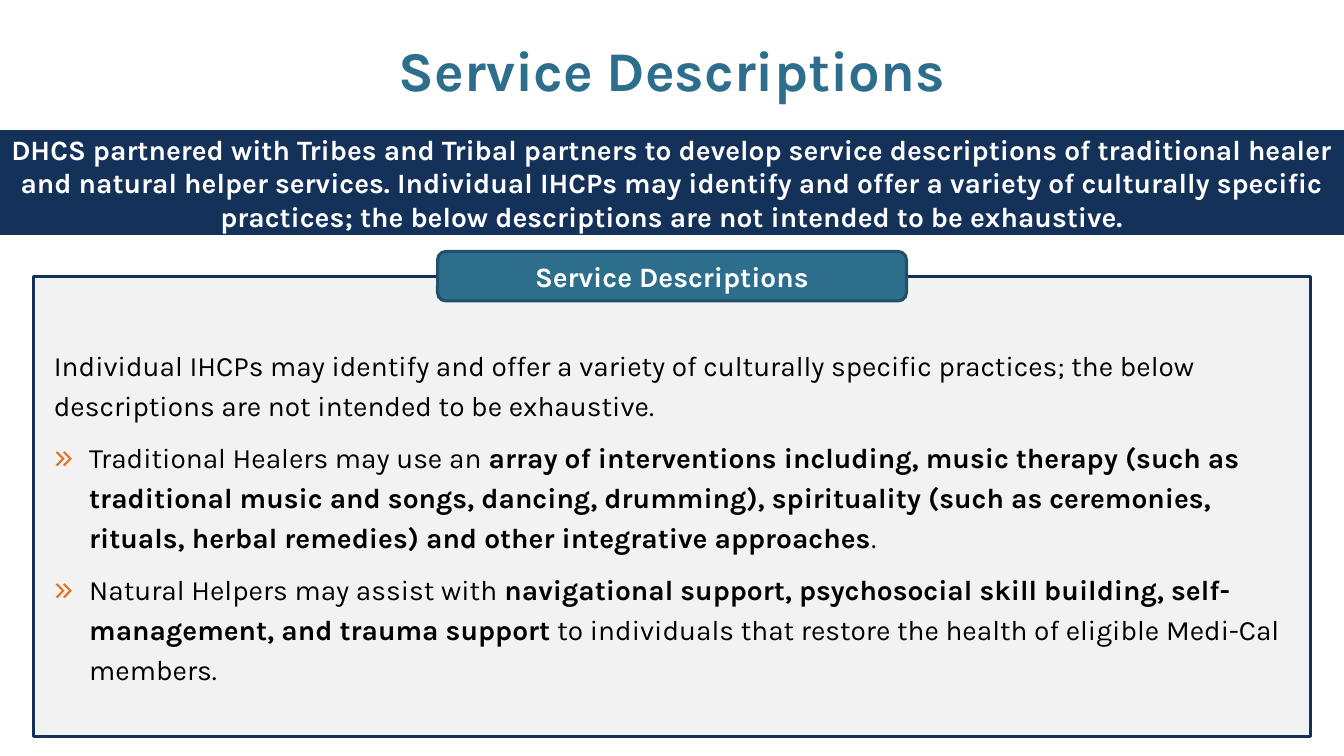
from dataclasses import dataclass

from lxml.etree import SubElement
from pptx import Presentation
from pptx.dml.color import RGBColor
from pptx.enum.shapes import MSO_SHAPE
from pptx.enum.text import MSO_ANCHOR, PP_ALIGN
from pptx.oxml.ns import qn
from pptx.util import Inches, Pt

TITLE = "Service Descriptions"
NOTICE = (
    "Individual IHCPs may identify and offer a variety of culturally specific practices; "
    "the below descriptions are not intended to be exhaustive."
)
# A paragraph is a list of (text, bold) runs.
BANNER = [
    ("DHCS partnered with Tribes and Tribal partners to develop service descriptions "
     "of traditional healer and natural helper services. " + NOTICE, True),
]
INTRODUCTION = [(NOTICE, False)]
SERVICES = [
    [
        ("Traditional Healers may use an ", False),
        ("array of interventions including, music therapy (such as traditional music and songs, "
         "dancing, drumming), spirituality (such as ceremonies, rituals, herbal remedies) "
         "and other integrative approaches", True),
        (".", False),
    ],
    [
        ("Natural Helpers may assist with ", False),
        ("navigational support, psychosocial skill building, self-management, "
         "and trauma support", True),
        (" to individuals that restore the health of eligible Medi-Cal members.", False),
    ],
]


@dataclass(frozen=True)
class Theme:
    font: str = "Karla"
    navy: str = "14315A"
    teal: str = "2D6E8D"
    teal_edge: str = "215168"
    panel: str = "F2F2F2"
    orange: str = "E47225"
    white: str = "FFFFFF"
    black: str = "000000"
    title_size: int = 40
    text_size: int = 20
    line_width: float = 2.25


THEME = Theme()
WIDTH, HEIGHT = 13.33, 7.5
PANEL_TOP, PANEL_WIDTH, PANEL_HEIGHT = 2.74, 12.66, 4.57
TAB_WIDTH, TAB_HEIGHT = 4.65, 0.49
BULLET_INDENT = 0.35


def centred_box(top, width, height):
    return [Inches(value) for value in ((WIDTH - width) / 2, top, width, height)]


def add_block(slide, kind, box, fill, line=None):
    shape = slide.shapes.add_shape(kind, *box)
    shape.shadow.inherit = False
    shape.fill.solid()
    shape.fill.fore_color.rgb = RGBColor.from_string(fill)
    if line:
        shape.line.color.rgb = RGBColor.from_string(line)
        shape.line.width = Pt(THEME.line_width)
    else:
        shape.line.fill.background()
    return shape


def write(shape, paragraphs, color, size=THEME.text_size, frame_format=None, **paragraph_format):
    """Fill a shape with paragraphs of (text, bold) runs and return the paragraphs."""
    frame = shape.text_frame
    frame_values = {"word_wrap": True, "vertical_anchor": MSO_ANCHOR.MIDDLE}
    for name, value in (frame_values | (frame_format or {})).items():
        setattr(frame, name, value)
    for index, runs in enumerate(paragraphs):
        paragraph = frame.add_paragraph() if index else frame.paragraphs[0]
        for name, value in ({"alignment": PP_ALIGN.CENTER} | paragraph_format).items():
            setattr(paragraph, name, value)
        for text, bold in runs:
            run = paragraph.add_run()
            run.text = text
            for name, value in {"name": THEME.font, "size": Pt(size), "bold": bold}.items():
                setattr(run.font, name, value)
            run.font.color.rgb = RGBColor.from_string(color)
    return frame.paragraphs


def add_bullet(paragraph):
    properties = paragraph._p.get_or_add_pPr()
    properties.set("marL", str(Inches(BULLET_INDENT)))
    properties.set("indent", str(-Inches(BULLET_INDENT)))
    bullet_color = SubElement(properties, qn("a:buClr"))
    SubElement(bullet_color, qn("a:srgbClr"), val=THEME.orange)
    SubElement(properties, qn("a:buSzPct"), val="125000")
    SubElement(properties, qn("a:buFont"), typeface=THEME.font)
    SubElement(properties, qn("a:buChar"), char="»")


def main():
    presentation = Presentation()
    presentation.slide_width, presentation.slide_height = Inches(WIDTH), Inches(HEIGHT)
    slide = presentation.slides.add_slide(presentation.slide_layouts[6])

    title = slide.shapes.add_textbox(*centred_box(0, WIDTH, 1.45))
    write(title, [[(TITLE, True)]], THEME.teal, THEME.title_size, line_spacing=0.9)

    banner = add_block(slide, MSO_SHAPE.RECTANGLE, centred_box(1.29, WIDTH, 1.04), THEME.navy)
    write(banner, [BANNER], THEME.white)

    panel_box = centred_box(PANEL_TOP, PANEL_WIDTH, PANEL_HEIGHT)
    panel = add_block(slide, MSO_SHAPE.RECTANGLE, panel_box, THEME.panel, THEME.navy)
    margins = {f"margin_{side}": Inches(0.2) for side in ("left", "top", "right")}
    paragraphs = write(panel, [INTRODUCTION, *SERVICES], THEME.black, frame_format=margins,
                       alignment=PP_ALIGN.LEFT, line_spacing=1.2, space_before=Pt(8))
    for paragraph in paragraphs[1:]:
        add_bullet(paragraph)

    tab_box = centred_box(PANEL_TOP - TAB_HEIGHT / 2, TAB_WIDTH, TAB_HEIGHT)
    tab = add_block(slide, MSO_SHAPE.ROUNDED_RECTANGLE, tab_box, THEME.teal, THEME.teal_edge)
    write(tab, [[(TITLE, True)]], THEME.white)

    presentation.save("out.pptx")


if __name__ == "__main__":
    main()
